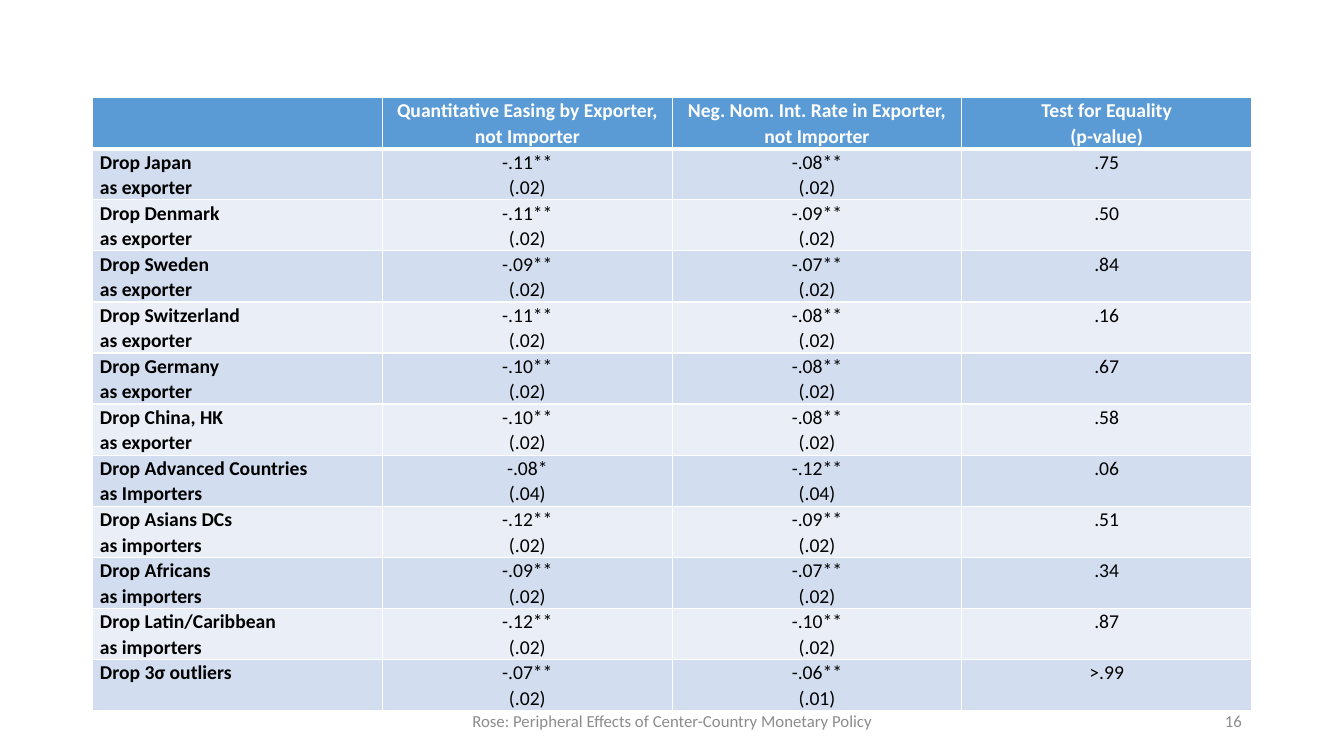
from dataclasses import dataclass

from lxml.etree import SubElement
from pptx import Presentation
from pptx.dml.color import RGBColor
from pptx.enum.text import MSO_ANCHOR, PP_ALIGN
from pptx.oxml.ns import qn
from pptx.slide import Slide
from pptx.table import _Cell
from pptx.text.text import TextFrame
from pptx.util import Cm, Pt

WHITE = RGBColor(0xFF, 0xFF, 0xFF)
BLACK = RGBColor(0x00, 0x00, 0x00)
GREY = RGBColor(0x8C, 0x8C, 0x8C)
HEADER_BLUE = RGBColor(0x5B, 0x9B, 0xD5)
BAND_DARK = RGBColor(0xD2, 0xDE, 0xEF)
BAND_LIGHT = RGBColor(0xEA, 0xEF, 0xF7)

FONT = "Calibri"
COLUMN_WIDTH = Cm(7.3)
ROW_HEIGHT = Cm(1.14)
THIN, THICK = Pt(1), Pt(3)


@dataclass(frozen=True)
class Estimate:
    sample: str
    easing: str
    negative_rate: str
    p_value: str

    def texts(self) -> list[str]:
        return [self.sample, self.easing, self.negative_rate, self.p_value]


@dataclass(frozen=True)
class FooterItem:
    text: str
    left: float
    width: float
    align: PP_ALIGN


HEADINGS = [
    "",
    "Quantitative Easing by Exporter, not Importer",
    "Neg. Nom. Int. Rate in Exporter, not Importer",
    "Test for Equality\n(p-value)",
]

ESTIMATES = [
    Estimate("Drop Japan\nas exporter", "-.11**\n(.02)", "-.08**\n(.02)", ".75"),
    Estimate("Drop Denmark\nas exporter", "-.11**\n(.02)", "-.09**\n(.02)", ".50"),
    Estimate("Drop Sweden\nas exporter", "-.09**\n(.02)", "-.07**\n(.02)", ".84"),
    Estimate("Drop Switzerland\nas exporter", "-.11**\n(.02)", "-.08**\n(.02)", ".16"),
    Estimate("Drop Germany\nas exporter", "-.10**\n(.02)", "-.08**\n(.02)", ".67"),
    Estimate("Drop China, HK\nas exporter", "-.10**\n(.02)", "-.08**\n(.02)", ".58"),
    Estimate("Drop Advanced Countries\nas Importers", "-.08*\n(.04)", "-.12**\n(.04)", ".06"),
    Estimate("Drop Asians DCs\nas importers", "-.12**\n(.02)", "-.09**\n(.02)", ".51"),
    Estimate("Drop Africans\nas importers", "-.09**\n(.02)", "-.07**\n(.02)", ".34"),
    Estimate("Drop Latin/Caribbean\nas importers", "-.12**\n(.02)", "-.10**\n(.02)", ".87"),
    Estimate("Drop 3σ outliers", "-.07**\n(.02)", "-.06**\n(.01)", ">.99"),
]

FOOTER = [
    FooterItem("Rose: Peripheral Effects of Center-Country Monetary Policy",
               11.23, 11.43, PP_ALIGN.CENTER),
    FooterItem("16", 23.93, 7.62, PP_ALIGN.RIGHT),
]


def format_text(frame: TextFrame, size: int, color: RGBColor, align: PP_ALIGN,
                bold: bool = False, spacing: float = 1.0) -> None:
    for para in frame.paragraphs:
        para.alignment = align
        para.line_spacing = spacing
        for span in para.runs:
            span.font.name = FONT
            span.font.size = Pt(size)
            span.font.bold = bold
            span.font.color.rgb = color


def add_borders(cell: _Cell, top: int, bottom: int) -> None:
    """Draw white borders; call before the cell is filled, as the schema puts lines first."""
    properties = cell._tc.get_or_add_tcPr()
    for side, width in (("L", THIN), ("R", THIN), ("T", top), ("B", bottom)):
        line = SubElement(properties, qn(f"a:ln{side}"), w=str(int(width)))
        fill = SubElement(line, qn("a:solidFill"))
        SubElement(fill, qn("a:srgbClr"), val=str(WHITE))


def fill_cell(cell: _Cell, text: str, row: int, column: int) -> None:
    is_header = row == 0
    cell.margin_left = cell.margin_right = Cm(0.18)
    cell.margin_top = cell.margin_bottom = 0
    add_borders(cell, top=THICK if row == 1 else THIN, bottom=THICK if is_header else THIN)
    cell.fill.solid()
    band = BAND_DARK if row % 2 else BAND_LIGHT
    cell.fill.fore_color.rgb = HEADER_BLUE if is_header else band
    cell.text_frame.text = text
    format_text(
        cell.text_frame, 14, WHITE if is_header else BLACK,
        PP_ALIGN.LEFT if column == 0 else PP_ALIGN.CENTER,
        bold=is_header or column == 0, spacing=1.07,
    )


def add_estimates_table(page: Slide) -> None:
    rows = [HEADINGS] + [estimate.texts() for estimate in ESTIMATES]
    table = page.shapes.add_table(
        len(rows), len(HEADINGS), Cm(2.34), Cm(2.46),
        COLUMN_WIDTH * len(HEADINGS), ROW_HEIGHT * len(rows),
    ).table
    for row, texts in enumerate(rows):
        for column, text in enumerate(texts):
            fill_cell(table.cell(row, column), text, row, column)


def add_footer_item(page: Slide, item: FooterItem) -> None:
    box = page.shapes.add_textbox(Cm(item.left), Cm(17.65), Cm(item.width), Cm(1.01))
    frame = box.text_frame
    frame.word_wrap = True
    frame.vertical_anchor = MSO_ANCHOR.MIDDLE
    frame.text = item.text
    format_text(frame, 12, GREY, item.align)


def main() -> None:
    deck = Presentation()
    deck.slide_width, deck.slide_height = Cm(33.87), Cm(19.05)
    page = deck.slides.add_slide(deck.slide_layouts[6])
    add_estimates_table(page)
    for item in FOOTER:
        add_footer_item(page, item)
    deck.save("out.pptx")


if __name__ == "__main__":
    main()
